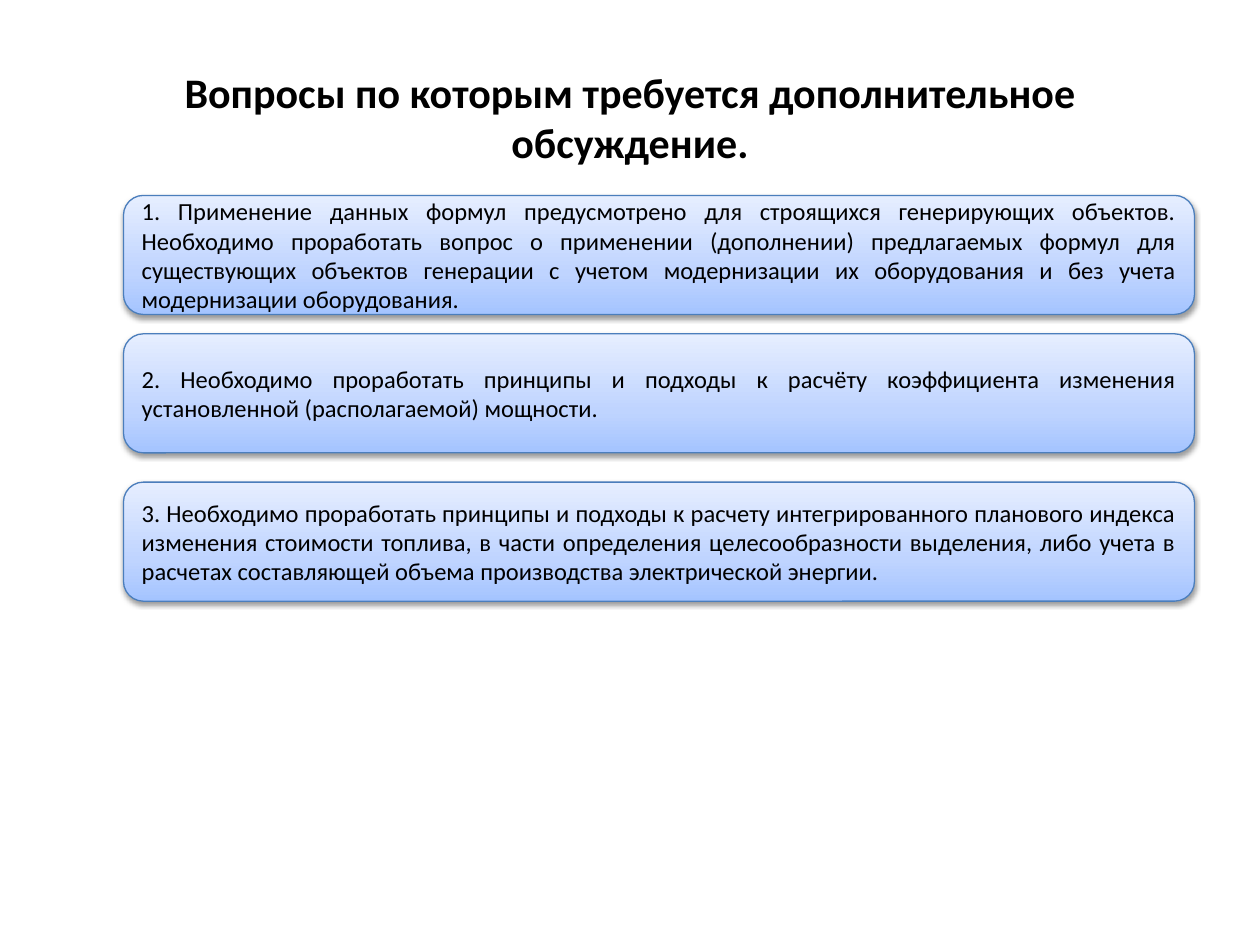
from copy import deepcopy

from lxml.etree import SubElement
from pptx import Presentation
from pptx.dml.color import RGBColor
from pptx.enum.shapes import MSO_SHAPE
from pptx.enum.text import MSO_ANCHOR, MSO_AUTO_SIZE, PP_ALIGN
from pptx.oxml.ns import qn
from pptx.util import Cm, Pt

TITLE = "Вопросы по которым требуется дополнительное обсуждение."
QUESTIONS = [
    (3.94, "1. Применение данных формул предусмотрено для строящихся генерирующих объектов. "
           "Необходимо проработать вопрос о применении (дополнении) предлагаемых формул для "
           "существующих объектов генерации с учетом модернизации их оборудования и без учета "
           "модернизации оборудования."),
    (6.73, "2. Необходимо проработать принципы и подходы к расчёту коэффициента изменения "
           "установленной (располагаемой) мощности."),
    (9.72, "3. Необходимо проработать принципы и подходы к расчету интегрированного планового "
           "индекса изменения стоимости топлива, в части определения целесообразности выделения, "
           "либо учета в расчетах составляющей объема производства электрической энергии."),
]
COLORS = {"text": "000000", "line": "4B7EBC", "shadow": "000000",
          "bottom": "A4C4FF", "middle": "BFD4FF", "top": "E6EEFF"}
GRADIENT = [(0, "bottom"), (0.35, "middle"), (1, "top")]
CARD_LEFT, CARD_WIDTH, CARD_HEIGHT = 2.49, 21.59, 2.4
SHADOW = {"blurRad": Pt(3.1), "dist": Pt(1.6), "dir": 90 * 60000, "rotWithShape": 0}
SHADOW_ALPHA = 38000
TITLE_FONT = {"name": "Calibri", "size": Pt(24), "bold": True}
CARD_FONT = {"name": "Calibri", "size": Pt(14), "bold": False}


def color(name):
    return RGBColor.from_string(COLORS[name])


def write_text(shape, text, font_format, alignment):
    frame = shape.text_frame
    frame.text = text
    frame.word_wrap = True
    frame.auto_size = MSO_AUTO_SIZE.NONE
    frame.vertical_anchor = MSO_ANCHOR.MIDDLE
    paragraph = frame.paragraphs[0]
    paragraph.alignment = alignment
    font = paragraph.runs[0].font
    for attribute, value in font_format.items():
        setattr(font, attribute, value)
    font.color.rgb = color("text")


def fill_gradient(shape):
    shape.fill.gradient()
    shape.fill.gradient_angle = 90
    stop_list = shape._element.spPr.find(".//" + qn("a:gsLst"))
    stop_list.append(deepcopy(stop_list[0]))
    for stop, (position, name) in zip(shape.fill.gradient_stops, GRADIENT):
        stop.position = position
        stop.color.rgb = color(name)


def add_shadow(shape):
    shape.shadow.inherit = False
    effects = shape._element.spPr.find(qn("a:effectLst"))
    shadow = SubElement(effects, qn("a:outerShdw"),
                        {key: str(value) for key, value in SHADOW.items()})
    shade = SubElement(shadow, qn("a:srgbClr"), val=COLORS["shadow"])
    SubElement(shade, qn("a:alpha"), val=str(SHADOW_ALPHA))


def add_card(slide, top, text):
    card = slide.shapes.add_shape(MSO_SHAPE.ROUNDED_RECTANGLE, Cm(CARD_LEFT), Cm(top),
                                  Cm(CARD_WIDTH), Cm(CARD_HEIGHT))
    fill_gradient(card)
    card.line.color.rgb = color("line")
    card.line.width = Pt(0.75)
    add_shadow(card)
    write_text(card, text, CARD_FONT, PP_ALIGN.JUSTIFY)


def main():
    presentation = Presentation()
    presentation.slide_width, presentation.slide_height = Cm(25.4), Cm(19.05)
    slide = presentation.slides.add_slide(presentation.slide_layouts[5])
    title = slide.shapes.title
    title.left, title.top, title.width, title.height = Cm(1.27), Cm(0.76), Cm(22.86), Cm(3.18)
    write_text(title, TITLE, TITLE_FONT, PP_ALIGN.CENTER)
    for top, text in QUESTIONS:
        add_card(slide, top, text)
    presentation.save("out.pptx")


if __name__ == "__main__":
    main()
